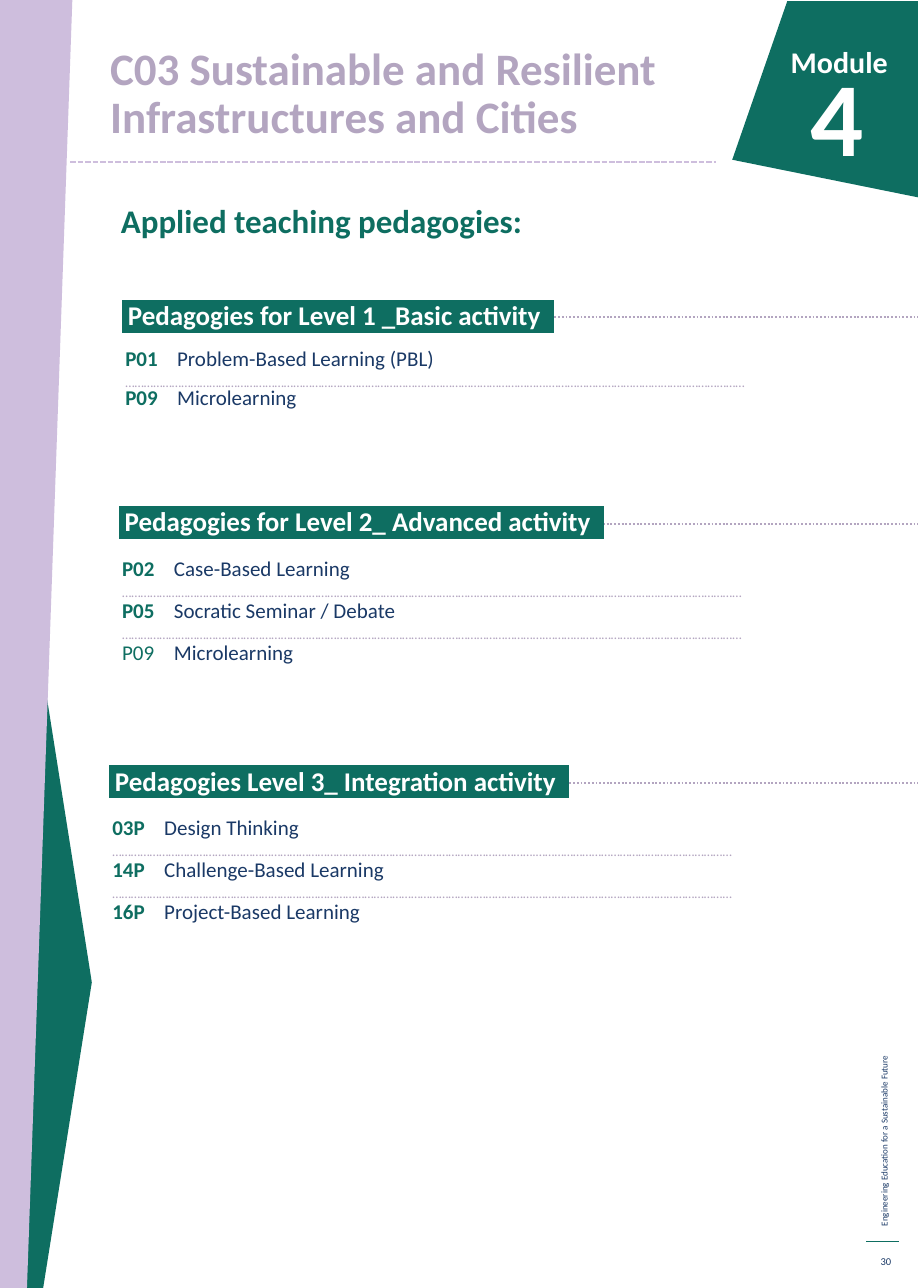
import pptx
import pptx.dml.color
import pptx.enum.dml
import pptx.enum.shapes
import pptx.enum.text
import pptx.oxml
import pptx.oxml.ns
import pptx.util
from lxml import etree

Inches = pptx.util.Inches
Pt = pptx.util.Pt
RGBColor = pptx.dml.color.RGBColor
Align = pptx.enum.text.PP_ALIGN
Anchor = pptx.enum.text.MSO_ANCHOR
Dash = pptx.enum.dml.MSO_LINE
qn = pptx.oxml.ns.qn

GREEN = RGBColor(0x0E, 0x6E, 0x61)
LILAC = RGBColor(0xCE, 0xBE, 0xDD)
MAUVE = RGBColor(0xB3, 0xA5, 0xC0)
NAVY = RGBColor(0x1A, 0x39, 0x66)
WHITE = RGBColor(0xFF, 0xFF, 0xFF)

FONT = "Calibri"
PAGE_WIDTH, PAGE_HEIGHT = 8.5, 11.93
EXACT = Pt(12.8)
DOTS = "……………………………………………………………………………………………………………………….………………………………………………………"

SECTIONS = [
    ((1.02, 2.84), " Pedagogies for Level 1 _Basic activity", EXACT,
     [("P01", "Problem-Based Learning (PBL)", True), ("P09", "Microlearning", True)], 1.2),
    ((0.99, 4.75), " Pedagogies for Level 2_ Advanced activity", 0.91,
     [("P02", "Case-Based Learning", True), ("P05", "Socratic Seminar / Debate", True),
      ("P09", "Microlearning", False)], 1.21),
    ((0.9, 7.15), " Pedagogies Level 3_ Integration activity", 0.91,
     [("03P", "Design Thinking", True), ("14P", "Challenge-Based Learning", True),
      ("16P", "Project-Based Learning", True)], 1.95),
]


def write_text(paragraph, text, size=14, color=NAVY, bold=False, highlight=None):
    """Add a formatted run to the paragraph."""
    run = paragraph.add_run()
    run.text = text
    run.font.size = Pt(size)
    run.font.bold = bold
    run.font.color.rgb = color
    run.font.name = FONT
    if highlight is not None:
        fill = run.font.fill._xPr.find(qn("a:solidFill"))
        mark = etree.Element(qn("a:highlight"))
        etree.SubElement(mark, qn("a:srgbClr")).set("val", str(highlight))
        fill.addnext(mark)


def format_paragraph(paragraph, align=Align.LEFT, spacing=1.0, before=0, margin=0, indent=0, tabs=()):
    """Set alignment, spacing, indents and tab stops, without a bullet."""
    paragraph.alignment = align
    paragraph.line_spacing = spacing
    paragraph.space_before = Pt(before)
    properties = paragraph._p.get_or_add_pPr()
    properties.set("marL", str(Inches(margin)))
    properties.set("indent", str(Inches(indent)))
    etree.SubElement(properties, qn("a:buNone"))
    if tabs:
        tab_list = etree.SubElement(properties, qn("a:tabLst"))
        for position in tabs:
            tab = etree.SubElement(tab_list, qn("a:tab"))
            tab.set("pos", str(Inches(position)))
            tab.set("algn", "l")
    return paragraph


def place_frame(shape, box, anchor=Anchor.TOP):
    """Move a text shape to its box and return its text frame."""
    shape.left, shape.top, shape.width, shape.height = map(Inches, box)
    frame = shape.text_frame
    frame.word_wrap = True
    frame.auto_size = pptx.enum.text.MSO_AUTO_SIZE.NONE
    frame.vertical_anchor = anchor
    return frame


def add_label(slide, box, anchor=Anchor.TOP):
    """Add a text box and return its shape and first paragraph."""
    shape = slide.shapes.add_textbox(0, 0, 0, 0)
    return shape, place_frame(shape, box, anchor).paragraphs[0]


def add_outline(slide, points, color):
    """Add a filled polygon through points given in inches."""
    corners = [(Inches(x), Inches(y)) for x, y in points]
    builder = slide.shapes.build_freeform(*corners[0])
    builder.add_line_segments(corners[1:], close=True)
    shape = builder.convert_to_shape()
    shape.shadow.inherit = False
    shape.fill.solid()
    shape.fill.fore_color.rgb = color
    shape.line.fill.background()


def add_rule(slide, left, right, y, color, width, dash=None):
    """Add a horizontal line."""
    line = slide.shapes.add_connector(
        pptx.enum.shapes.MSO_CONNECTOR.STRAIGHT, Inches(left), Inches(y), Inches(right), Inches(y))
    line.line.color.rgb = color
    line.line.width = Pt(width)
    if dash is not None:
        line.line.dash_style = dash
    etree.SubElement(line._element.spPr, qn("a:effectLst"))


def add_side_band(slide, box):
    """Draw the lilac band and the green wedge along the left edge."""
    left, top, width, height = box
    bottom = top + height
    add_outline(slide, [(left + 0.4, bottom), (left + 0.23, bottom), (left + 0.23, top + 5.17),
                        (left + 0.83, top + 8.97), (left + 0.85, top + 9.1)], GREEN)
    add_outline(slide, [(left, top), (left + width, top), (left + 0.25, bottom), (left, bottom)], LILAC)


def add_footer(slide, box):
    """Write the vertical running title, its rule and the page number."""
    left, top, width, height = box
    length, thickness = 4.49, 0.2
    shape, paragraph = add_label(
        slide, (left + 0.165 - length / 2, top - 2.29 - thickness / 2, length, thickness))
    shape.rotation = 270
    write_text(paragraph, "Engineering Education for a Sustainable Future", size=6)
    add_rule(slide, left, left + 0.3, top, GREEN, 0.75)
    number = add_label(slide, (left, top + 0.04, width, height), Anchor.MIDDLE)[1]
    write_text(format_paragraph(number, Align.RIGHT), "30", size=7)


def add_header(slide, box):
    """Place the title, its dashed rule and the module badge."""
    left, top, width, height = box
    frame = place_frame(slide.shapes.title, box, Anchor.BOTTOM)
    write_text(format_paragraph(frame.paragraphs[0], spacing=0.89),
               "C03 Sustainable and Resilient Infrastructures and Cities", size=30, color=MAUVE, bold=True)
    add_rule(slide, left - 0.27, left + 5.71, top + 1.22, LILAC, 1.25, Dash.SQUARE_DOT)
    add_outline(slide, [(8.53, 0.01), (7.29, 0.01), (6.78, 1.48), (8.51, 1.83)], GREEN)
    for text, size, x, y in [("Module", 20, 5.6, 0.07), ("4", 70, 5.38, 0.15)]:
        paragraph = add_label(slide, (left + x, top + y, 1.8, 1.42))[1]
        write_text(format_paragraph(paragraph, Align.RIGHT, before=22.7), text, size=size, color=WHITE, bold=True)


def add_subtitle(placeholder, box):
    """Write the subtitle in its placeholder."""
    paragraph = place_frame(placeholder, box).paragraphs[0]
    write_text(format_paragraph(paragraph, spacing=0.9, before=8.5),
               "Applied teaching pedagogies:", size=22, color=GREEN, bold=True)


def add_section(slide, placeholder, corner, heading, spacing, items, height):
    """Place a highlighted heading, its dotted rule and its list of pedagogies."""
    left, top = corner
    frame = place_frame(placeholder, (left + 0.03, top + 0.37, 6.64, height))

    def add_row(paragraph, row_spacing):
        return format_paragraph(paragraph, spacing=row_spacing, margin=0.49, indent=-0.48,
                                tabs=(0.62, 1.75) if row_spacing == EXACT else ())

    for index, (code, name, bold) in enumerate(items):
        if index:
            write_text(add_row(frame.add_paragraph(), EXACT), DOTS, size=9, color=MAUVE)
        row = add_row(frame.add_paragraph() if index else frame.paragraphs[0], spacing)
        write_text(row, code, color=GREEN, bold=bold)
        write_text(row, "\t" + name)
    add_rule(slide, 2.5, PAGE_WIDTH, top + 0.1, MAUVE, 1.25, Dash.ROUND_DOT)
    paragraph = add_label(slide, (left, top, 6.7, 0.33))[1]
    format_paragraph(paragraph, Align.JUSTIFY, spacing=EXACT, margin=0.01)
    for text, color in [(heading, WHITE), (". ", GREEN)]:
        write_text(paragraph, text, size=18, color=color, bold=True, highlight=GREEN)


def main():
    """Build the one-page presentation."""
    presentation = pptx.Presentation()
    presentation.slide_width, presentation.slide_height = Inches(PAGE_WIDTH), Inches(PAGE_HEIGHT)
    slide = presentation.slides.add_slide(presentation.slide_layouts[4])
    subtitle, *lists = list(slide.placeholders)[1:]
    add_side_band(slide, (0, 0, 0.67, PAGE_HEIGHT))
    add_footer(slide, (8.02, 11.5, 0.33, 0.29))
    add_header(slide, (0.92, 0.28, 5.99, 1.1))
    add_subtitle(subtitle, (1.02, 1.85, 5.54, 1.05))
    for placeholder, section in zip(lists, SECTIONS):
        add_section(slide, placeholder, *section)
    presentation.save("out.pptx")


if __name__ == "__main__":
    main()
